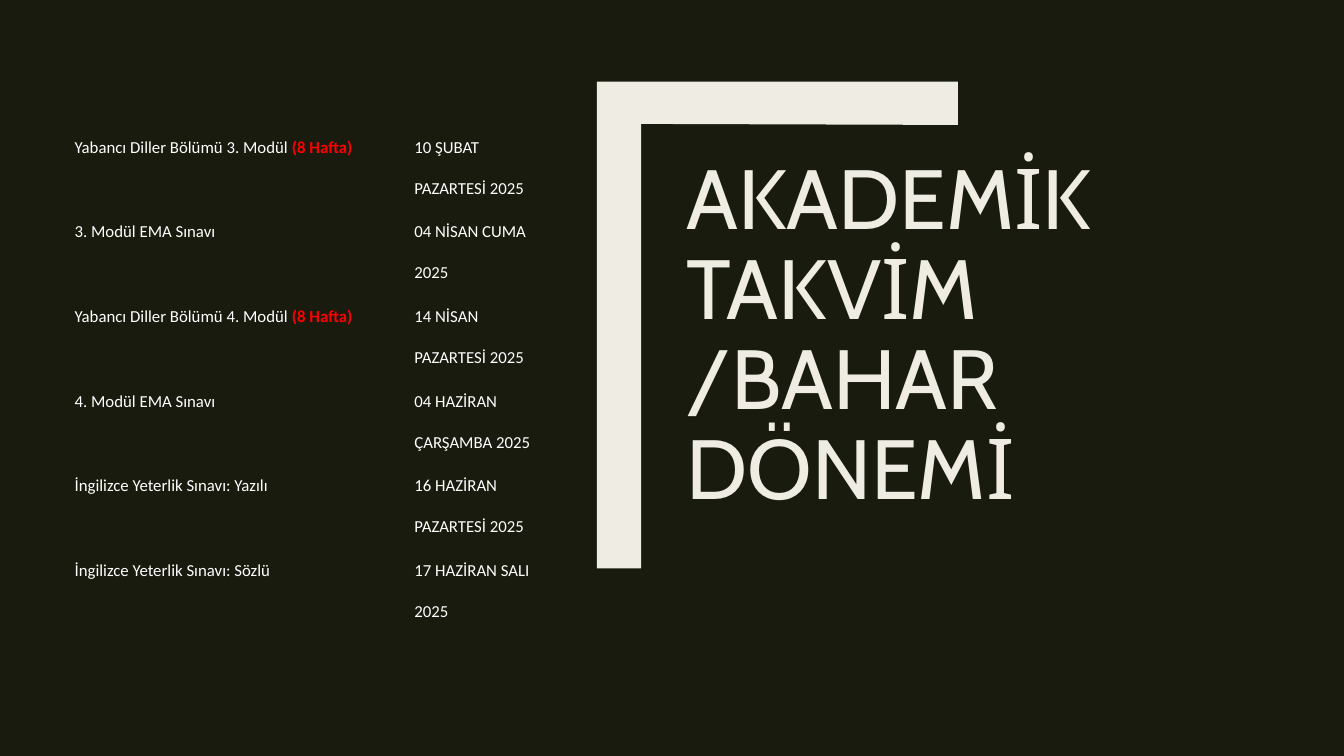
"""Builds the spring term academic calendar slide."""
import dataclasses

import pptx
import pptx.dml.color
import pptx.enum.text
import pptx.util

Inches = pptx.util.Inches
Pt = pptx.util.Pt

DARK, CREAM, WHITE, RED = "191B0E", "EFEDE3", "FFFFFF", "FF0000"
NO_GRID_STYLE = "{2D5ABB26-0587-4C30-8999-92F81FD0307C}"


@dataclasses.dataclass(frozen=True)
class Event:
    name: str
    date: str
    duration: str = ""
    space_before: float = 2.2


EVENTS = [
    Event("Yabancı Diller Bölümü 3. Modül ", "10 ŞUBAT PAZARTESİ 2025", "(8 Hafta)"),
    Event("3. Modül EMA Sınavı", "04 NİSAN CUMA 2025"),
    Event("Yabancı Diller Bölümü 4. Modül ", "14 NİSAN PAZARTESİ 2025", "(8 Hafta)", 2.3),
    Event("4. Modül EMA Sınavı", "04 HAZİRAN ÇARŞAMBA 2025"),
    Event("İngilizce Yeterlik Sınavı: Yazılı", "16 HAZİRAN PAZARTESİ 2025"),
    Event("İngilizce Yeterlik Sınavı: Sözlü", "17 HAZİRAN SALI 2025"),
]


def paint(fill, color: str) -> None:
    fill.solid()
    fill.fore_color.rgb = pptx.dml.color.RGBColor.from_string(color)


def write(paragraph, text: str, *, font: str = "Calibri", size: float = 12,
          color: str = WHITE, bold: bool = False, spacing: float = 2,
          before: float = 0) -> None:
    paragraph.alignment = pptx.enum.text.PP_ALIGN.LEFT
    paragraph.line_spacing = spacing
    paragraph.space_before = Pt(before)
    run = paragraph.add_run()
    run.text = text
    run.font.name, run.font.size, run.font.bold = font, Pt(size), bold
    paint(run.font.fill, color)


def draw_bracket(slide) -> None:
    corners = [(6.36, 5.64), (5.92, 5.64), (5.92, 0.81), (9.5, 0.81), (9.5, 1.24), (6.36, 1.23)]
    points = [(Inches(x), Inches(y)) for x, y in corners]
    builder = slide.shapes.build_freeform(*points[0])
    builder.add_line_segments(points[1:], close=True)
    bracket = builder.convert_to_shape()
    bracket.shadow.inherit = False
    bracket.line.fill.background()
    paint(bracket.fill, CREAM)


def draw_heading(slide) -> None:
    heading = slide.shapes.title
    heading.left, heading.top = Inches(6.71), Inches(1.62)
    heading.width, heading.height = Inches(6.13), Inches(3.56)
    frame = heading.text_frame
    frame.word_wrap = True
    frame.auto_size = pptx.enum.text.MSO_AUTO_SIZE.NONE
    frame.vertical_anchor = pptx.enum.text.MSO_ANCHOR.BOTTOM
    write(frame.paragraphs[0], "AKADEMİK TAKVİM /BAHAR DÖNEMİ",
          font="Cabin", size=60, color=CREAM, spacing=0.89)


def draw_calendar(slide, events: list[Event]) -> None:
    frame = slide.shapes.add_table(len(events), 2, Inches(0.69), Inches(1.16),
                                   Inches(4.74), Inches(4.74))
    calendar = frame.table
    calendar.first_row = calendar.horz_banding = False
    calendar._tbl.tblPr[0].text = NO_GRID_STYLE
    for column, width in zip(calendar.columns, (3.37, 1.37)):
        column.width = Inches(width)
    for row, event in zip(calendar.rows, events):
        row.height = Inches(0.54 if event is events[-1] else 0.84)
        for cell, text in zip(row.cells, (event.name, event.date)):
            cell.fill.background()
            cell.margin_left = Inches(0.05)
            cell.margin_right = cell.margin_top = cell.margin_bottom = 0
            write(cell.text_frame.paragraphs[0], text, before=event.space_before)
        if event.duration:
            write(row.cells[0].text_frame.paragraphs[0], event.duration,
                  color=RED, bold=True, before=event.space_before)


def main() -> None:
    deck = pptx.Presentation()
    deck.slide_width, deck.slide_height = Inches(13.33), Inches(7.5)
    slide = deck.slides.add_slide(deck.slide_layouts[5])
    paint(slide.background.fill, DARK)
    draw_bracket(slide)
    draw_heading(slide)
    draw_calendar(slide, EVENTS)
    deck.save("out.pptx")


if __name__ == "__main__":
    main()
